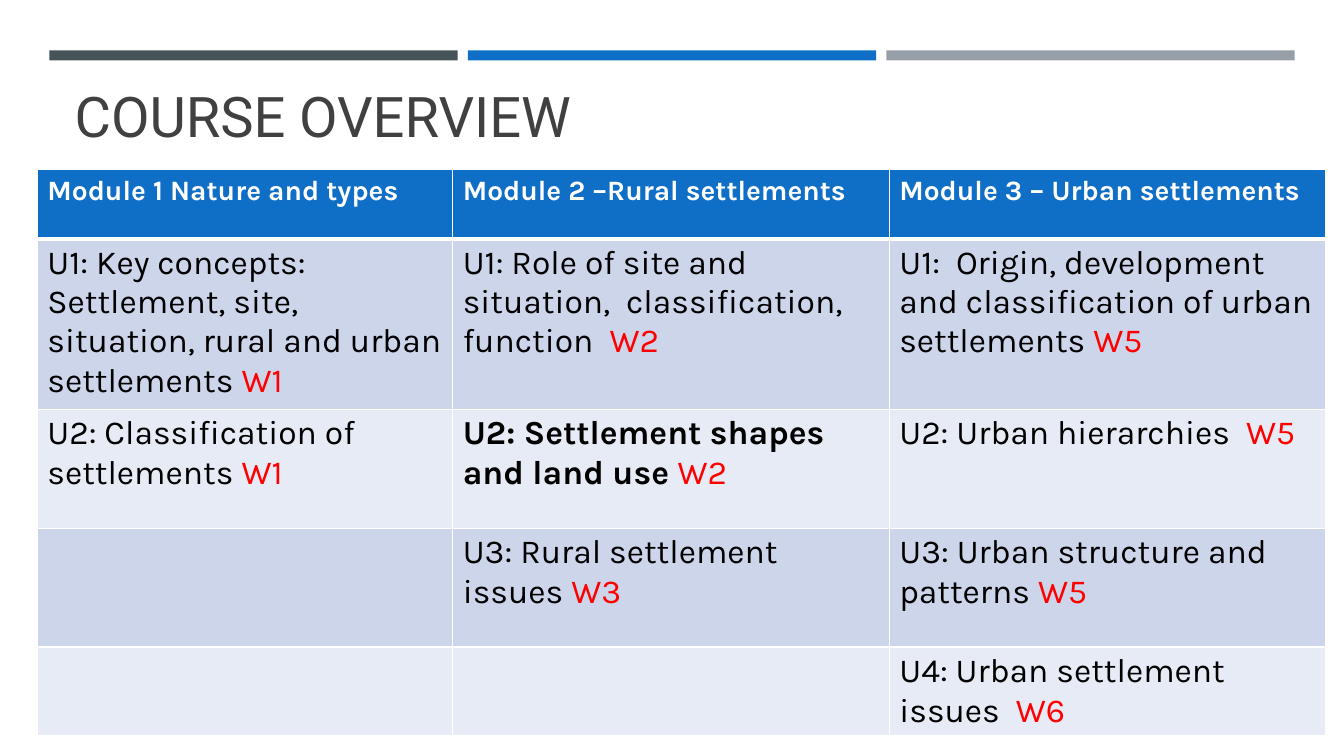
from lxml import etree
from pptx import Presentation, util as u
from pptx.dml.color import RGBColor
from pptx.enum import shapes, text
from pptx.oxml.ns import qn

PX = 9144  # EMU, 100 px to the inch
COLOURS = {
    "slate": "465359", "blue": "0F6FC6", "grey": "969FA7", "title": "404040",
    "white": "FFFFFF", "black": "000000", "week": "FF0000",
    "band_dark": "CCD5EA", "band_light": "E7EBF5",
}
MODULES = ["Module 1 Nature and types", "Module 2 –Rural settlements",
           "Module 3 – Urban settlements"]
# Each unit is its topic and its teaching week
UNITS = [
    [("U1: Key concepts: Settlement, site, situation, rural and urban settlements ", "W1"),
     ("U1: Role of site and situation,  classification, function  ", "W2"),
     ("U1:  Origin, development and classification of urban settlements ", "W5")],
    [("U2: Classification of settlements ", "W1"),
     ("U2: Settlement shapes and land use ", "W2"),
     ("U2: Urban hierarchies ", " W5")],
    [None, ("U3: Rural settlement issues ", "W3"),
     ("U3: Urban structure and patterns ", "W5")],
    [None, None, ("U4: Urban settlement issues ", " W6")],
]
CURRENT_UNIT = (2, 1)
COLUMN_WIDTHS = [412, 433, 433]
ROW_HEIGHTS = [69, 169, 118, 118, 88]


def add_run(paragraph, words, colour, font="Karla", size=24, bold=False):
    run = paragraph.add_run()
    run.text = words
    formats = {"name": font, "size": u.Pt(size), "bold": bold}
    for attribute, value in formats.items():
        setattr(run.font, attribute, value)
    run.font.color.rgb = RGBColor.from_string(COLOURS[colour])


def format_cell(cell, fill, top=1, bottom=1):
    """Give a cell its fill and white borders, with widths in points."""
    properties = cell._tc.get_or_add_tcPr()
    for side, width in {"L": 1, "R": 1, "T": top, "B": bottom}.items():
        border = etree.SubElement(properties, qn(f"a:ln{side}"), w=str(u.Pt(width)))
        paint = etree.SubElement(border, qn("a:solidFill"))
        etree.SubElement(paint, qn("a:srgbClr"), val=COLOURS["white"])
    cell.fill.solid()
    cell.fill.fore_color.rgb = RGBColor.from_string(COLOURS[fill])


deck = Presentation()
deck.slide_width, deck.slide_height = 1333 * PX, 750 * PX
slide = deck.slides.add_slide(deck.slide_layouts.get_by_name("Title Only"))

for index, colour in enumerate(["slate", "blue", "grey"]):
    bar = slide.shapes.add_shape(shapes.MSO_SHAPE.RECTANGLE, (49 + 415 * index) * PX,
                                 50 * PX, 405 * PX, 10 * PX)
    bar.shadow.inherit = False
    bar.fill.solid()
    bar.fill.fore_color.rgb = RGBColor.from_string(COLOURS[colour])
    bar.line.fill.background()

title = slide.shapes.title
for attribute, length in {"left": 64, "top": 63, "width": 1206, "height": 90}.items():
    setattr(title, attribute, length * PX)
title.text_frame.auto_size = text.MSO_AUTO_SIZE.NONE
title.text_frame.vertical_anchor = text.MSO_ANCHOR.BOTTOM
heading = title.text_frame.paragraphs[0]
heading.alignment = text.PP_ALIGN.LEFT
heading.line_spacing = 0.9
add_run(heading, "COURSE OVERVIEW", "title", "Roboto", 40)

overview = slide.shapes.add_table(
    len(ROW_HEIGHTS), len(COLUMN_WIDTHS), 37 * PX, 168 * PX,
    sum(COLUMN_WIDTHS) * PX, sum(ROW_HEIGHTS) * PX).table
for column, width in zip(overview.columns, COLUMN_WIDTHS):
    column.width = width * PX
for row, height in zip(overview.rows, ROW_HEIGHTS):
    row.height = height * PX

for column, module in enumerate(MODULES):
    cell = overview.cell(0, column)
    format_cell(cell, "blue", bottom=3)
    add_run(cell.text_frame.paragraphs[0], module, "white", size=20, bold=True)

for row, units in enumerate(UNITS, start=1):
    for column, unit in enumerate(units):
        cell = overview.cell(row, column)
        format_cell(cell, "band_dark" if row % 2 else "band_light",
                    top=3 if row == 1 else 1)
        if unit:
            topic, week = unit
            paragraph = cell.text_frame.paragraphs[0]
            add_run(paragraph, topic, "black", bold=(row, column) == CURRENT_UNIT)
            add_run(paragraph, week, "week")

deck.save("out.pptx")
